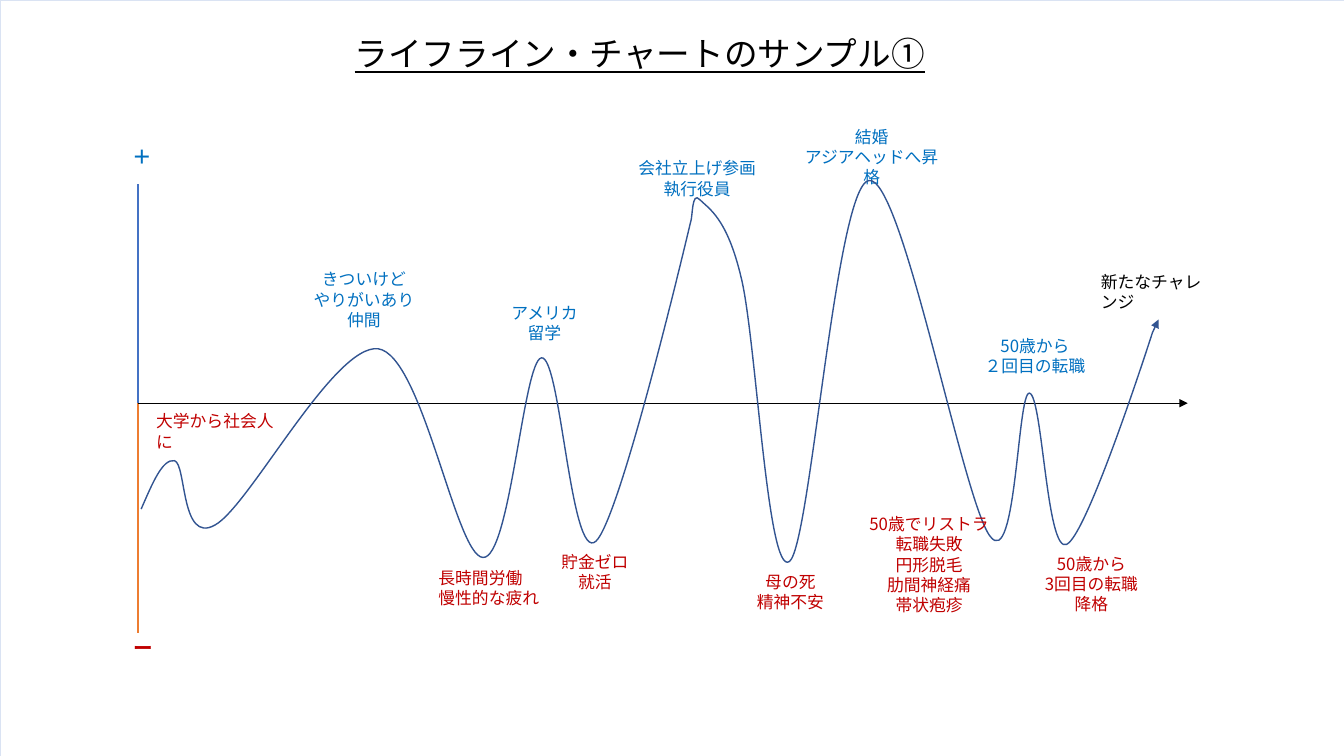
from dataclasses import dataclass

from lxml import etree
from pptx import Presentation
from pptx import util as u
from pptx.dml.color import RGBColor
from pptx.enum import shapes, text
from pptx.oxml.ns import qn

PX = 9144  # EMU in one px, 100 px to the inch
SLIDE_W, SLIDE_H = 1333, 750

Point = tuple[int, int]


@dataclass(frozen=True)
class Theme:
    font: str = "Noto Sans CJK JP"
    black: str = "000000"
    high: str = "0070C0"
    low: str = "C00000"
    plus_axis: str = "4472C4"
    minus_axis: str = "ED7D31"
    curve: str = "325491"
    frame: str = "DAE3F3"
    title_pt: int = 24
    sign_pt: int = 14
    label_pt: int = 12


THEME = Theme()


@dataclass(frozen=True)
class Axis:
    start: Point
    end: Point
    color: str
    weight: float
    arrow: bool = False


@dataclass(frozen=True)
class Label:
    x: int
    y: int
    w: int
    h: int
    lines: tuple[str, ...]
    color: str
    size: int = THEME.label_pt
    centred: bool = True
    bold: bool = False
    underline: bool = False


@dataclass(frozen=True)
class Bend:
    """A cubic curve from the previous point to end."""
    control_1: Point
    control_2: Point
    end: Point


AXES = (
    Axis((137, 183), (137, 400), THEME.plus_axis, 1.5),
    Axis((137, 400), (137, 628), THEME.minus_axis, 1.5),
    Axis((137, 400), (1178, 400), THEME.black, 0.5, arrow=True),
)

EVENTS = (
    Label(122, 139, 36, 34, ("＋",), THEME.high, size=THEME.sign_pt, bold=True),
    Label(123, 626, 36, 34, ("ー",), THEME.low, size=THEME.sign_pt, bold=True),
    Label(1082, 265, 128, 30, ("新たなチャレンジ",), THEME.black, centred=False),
    Label(297, 262, 128, 71, ("きついけど", "やりがいあり", "仲間"), THEME.high),
    Label(489, 295, 102, 50, ("アメリカ", "留学"), THEME.high),
    Label(609, 152, 165, 50, ("会社立上げ参画", "執行役員"), THEME.high),
    Label(782, 121, 165, 50, ("結婚", "アジアヘッドへ昇格"), THEME.high),
    Label(145, 403, 149, 30, ("大学から社会人に",), THEME.low, centred=False),
    Label(425, 558, 134, 50, ("長時間労働", "慢性的な疲れ"), THEME.low, centred=False),
    Label(523, 542, 134, 50, ("貯金ゼロ", "就活"), THEME.low),
    Label(717, 562, 134, 50, ("母の死", "精神不安"), THEME.low),
    Label(944, 328, 165, 50, ("50歳から", "２回目の転職"), THEME.high),
)

LATE_EVENTS_AND_TITLE = (
    Label(995, 544, 175, 71, ("50歳から", "3回目の転職", "降格"), THEME.low),
    Label(834, 505, 175, 131,
          ("50歳でリストラ", "転職失敗", "円形脱毛", "肋間神経痛", "帯状疱疹"), THEME.low),
    Label(151, 28, 967, 50, ("ライフライン・チャートのサンプル①",), THEME.black,
          size=THEME.title_pt, underline=True),
)

LIFE_START = (140, 505)
LIFE_BENDS = (
    Bend((151, 480), (161, 455), (173, 457)),
    Bend((185, 460), (179, 540), (213, 521)),
    Bend((247, 503), (331, 341), (375, 346)),
    Bend((419, 352), (452, 552), (479, 553)),
    Bend((506, 555), (519, 358), (537, 355)),
    Bend((556, 352), (566, 559), (591, 537)),
    Bend((616, 514), (685, 220), (685, 220)),
    Bend((687, 216), (686, 189), (694, 198)),
    Bend((703, 207), (721, 216), (735, 275)),
    Bend((750, 335), (761, 573), (783, 557)),
    Bend((804, 541), (829, 183), (862, 179)),
    Bend((895, 175), (955, 497), (982, 532)),
    Bend((1008, 567), (1009, 389), (1021, 390)),
    Bend((1034, 392), (1038, 550), (1058, 540)),
    Bend((1079, 530), (1143, 330), (1143, 330)),
)
LIFE_END = (1149, 317)


def emu(px: int) -> u.Emu:
    return u.Emu(px * PX)


def style_line(line, color: str, weight: float, arrow: bool = False) -> None:
    line.color.rgb = RGBColor.from_string(color)
    line.width = u.Pt(weight)
    if arrow:
        ln = line._get_or_add_ln()
        etree.SubElement(ln, qn("a:tailEnd"), type="triangle")


def draw_axis(s, axis: Axis) -> None:
    line = s.shapes.add_connector(shapes.MSO_CONNECTOR.STRAIGHT,
                                  *map(emu, axis.start + axis.end))
    style_line(line.line, axis.color, axis.weight, axis.arrow)
    etree.SubElement(line._element.spPr, qn("a:effectLst"))


def draw_label(s, label: Label) -> None:
    sp = s.shapes.add_textbox(*map(emu, (label.x, label.y, label.w, label.h)))
    tf = sp.text_frame
    tf.word_wrap = True
    tf.auto_size = text.MSO_AUTO_SIZE.SHAPE_TO_FIT_TEXT
    for i, line in enumerate(label.lines):
        p = tf.add_paragraph() if i else tf.paragraphs[0]
        p.alignment = text.PP_ALIGN.CENTER if label.centred else text.PP_ALIGN.LEFT
        r = p.add_run()
        r.text = line
        r.font.name = THEME.font
        r.font.size = u.Pt(label.size)
        r.font.bold = label.bold
        r.font.underline = label.underline
        r.font.color.rgb = RGBColor.from_string(label.color)
        etree.SubElement(r._r.get_or_add_rPr(), qn("a:ea"), typeface=THEME.font)


def curve_segments(sp, bends: tuple[Bend, ...]) -> None:
    """Turn the leading straight segments of a freeform into cubic curves."""
    segments = list(sp._element.iter(qn("a:lnTo")))
    for segment, bend in zip(segments, bends):
        segment.tag = qn("a:cubicBezTo")
        for i, (x, y) in enumerate((bend.control_1, bend.control_2)):
            pt = etree.Element(qn("a:pt"), x=str(emu(x) - sp.left), y=str(emu(y) - sp.top))
            segment.insert(i, pt)


def draw_life_line(s) -> None:
    anchors = [*(bend.end for bend in LIFE_BENDS), LIFE_END]
    builder = s.shapes.build_freeform(*map(emu, LIFE_START))
    builder.add_line_segments([(emu(x), emu(y)) for x, y in anchors], close=False)
    sp = builder.convert_to_shape()
    curve_segments(sp, LIFE_BENDS)
    sp.shadow.inherit = False
    sp.fill.background()
    style_line(sp.line, THEME.curve, 1, arrow=True)


def draw_frame(s) -> None:
    sp = s.shapes.add_shape(shapes.MSO_SHAPE.RECTANGLE, 0, 0, emu(SLIDE_W), emu(SLIDE_H))
    sp.shadow.inherit = False
    sp.fill.background()
    style_line(sp.line, THEME.frame, 0.5)


def main() -> None:
    prs = Presentation()
    prs.slide_width, prs.slide_height = emu(SLIDE_W), emu(SLIDE_H)
    s = prs.slides.add_slide(prs.slide_layouts[6])
    for axis in AXES:
        draw_axis(s, axis)
    for label in EVENTS:
        draw_label(s, label)
    draw_life_line(s)
    for label in LATE_EVENTS_AND_TITLE:
        draw_label(s, label)
    draw_frame(s)
    prs.save("out.pptx")


if __name__ == "__main__":
    main()
